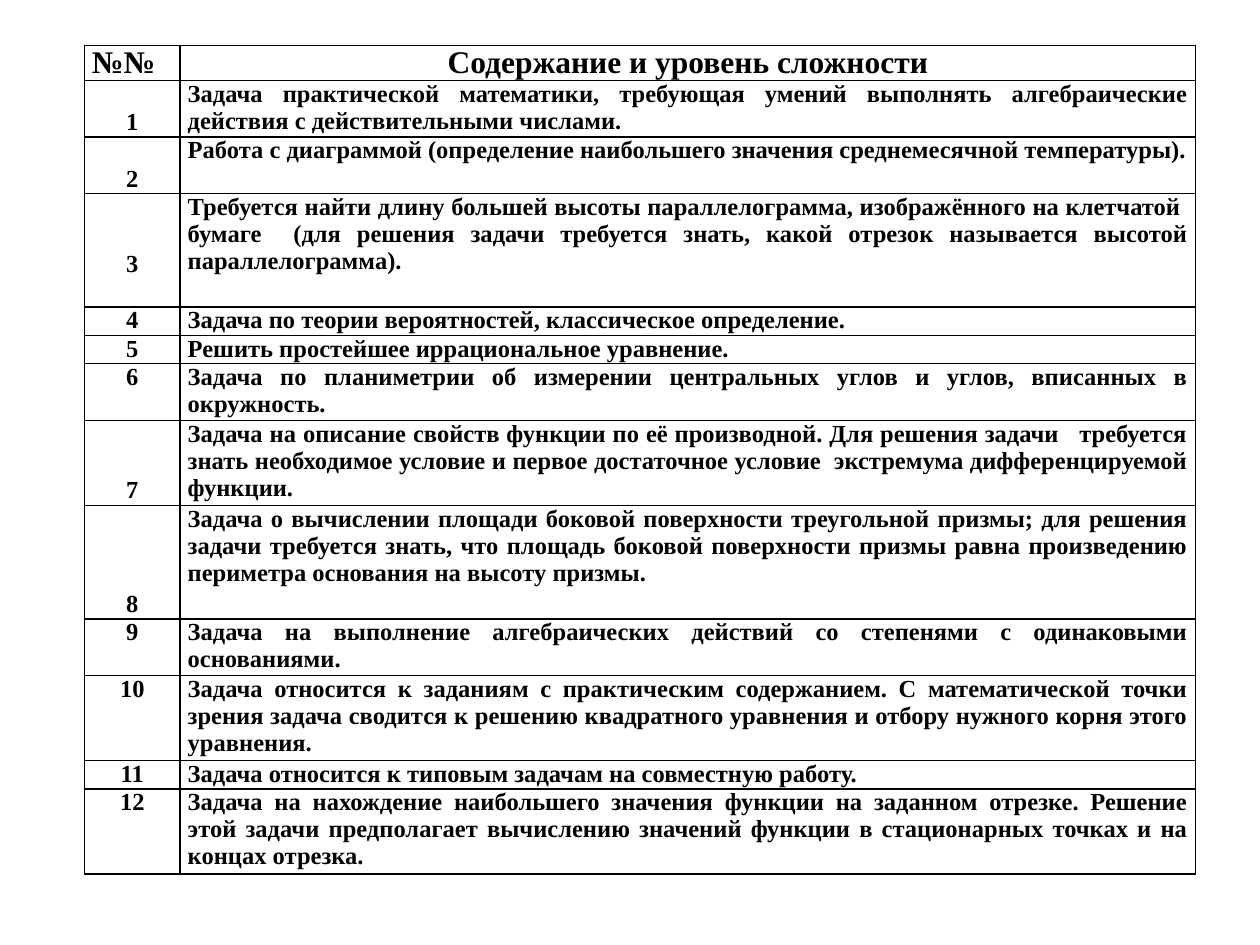
from dataclasses import dataclass

from lxml.etree import SubElement
from pptx import Presentation
from pptx.dml.color import RGBColor
from pptx.enum.text import PP_ALIGN
from pptx.oxml.ns import qn
from pptx.table import _Cell
from pptx.util import Inches, Pt

COLORS = {"ink": "000000"}
FONT = "Times New Roman"
LINE_HEIGHT = 0.9 / 4
COLUMN_WIDTHS = (0.76, 8.06)


@dataclass
class Task:
    """A task description, its row height in lines and the lines above its number."""

    text: str
    lines: int = 1
    lines_above: int = 0


TASKS = [
    Task("Задача практической математики, требующая умений выполнять алгебраические "
         "действия с действительными числами.", 2, 1),
    Task("Работа с диаграммой (определение наибольшего значения среднемесячной "
         "температуры).", 2, 1),
    Task("Требуется найти длину большей высоты параллелограмма, изображённого на "
         "клетчатой  бумаге  (для решения задачи требуется знать, какой отрезок "
         "называется высотой параллелограмма).", 4, 2),
    Task("Задача по теории вероятностей, классическое определение."),
    Task("Решить простейшее иррациональное уравнение."),
    Task("Задача по планиметрии об измерении центральных углов и углов, вписанных "
         "в окружность.", 2),
    Task("Задача на описание свойств функции по её производной. Для решения задачи   "
         "требуется знать необходимое условие и первое достаточное условие  экстремума "
         "дифференцируемой функции.", 3, 2),
    Task("Задача о вычислении площади боковой поверхности треугольной призмы; для "
         "решения задачи требуется знать, что площадь боковой поверхности призмы равна "
         "произведению периметра основания на высоту призмы.", 4, 3),
    Task("Задача на выполнение алгебраических действий со степенями с одинаковыми "
         "основаниями.", 2),
    Task("Задача относится к заданиям с практическим содержанием. С математической "
         "точки зрения задача сводится к решению квадратного уравнения и отбору "
         "нужного корня этого уравнения.", 3),
    Task("Задача относится к типовым задачам на совместную работу."),
    Task("Задача на нахождение наибольшего значения функции на заданном отрезке. "
         "Решение этой задачи предполагает вычислению значений функции в стационарных "
         "точках и на концах отрезка.", 3),
]


def add_borders(cell: _Cell) -> None:
    """Draw a thin solid line on every side of the cell."""
    properties = cell._tc.get_or_add_tcPr()
    for side in ("a:lnL", "a:lnR", "a:lnT", "a:lnB"):
        line = SubElement(properties, qn(side), w=str(Pt(1)))
        fill = SubElement(line, qn("a:solidFill"))
        SubElement(fill, qn("a:srgbClr"), val=COLORS["ink"])


def fill_cell(cell: _Cell, text: str, align: PP_ALIGN, size: int = 14,
              lines_above: int = 0) -> None:
    """Write bold text into a bordered, unfilled cell."""
    add_borders(cell)
    cell.fill.background()
    cell.margin_left = cell.margin_right = Inches(0.06)
    cell.margin_top = Inches(lines_above * LINE_HEIGHT)
    cell.margin_bottom = 0
    cell.text_frame.text = text
    para = cell.text_frame.paragraphs[0]
    para.alignment = align
    font = para.runs[0].font
    font.name = FONT
    font.size = Pt(size)
    font.bold = True
    font.color.rgb = RGBColor.from_string(COLORS["ink"])


def main() -> None:
    """Build the slide with the table of tasks."""
    deck = Presentation()
    deck.slide_width, deck.slide_height = Inches(10), Inches(7.5)
    page = deck.slides.add_slide(deck.slide_layouts[6])

    row_lines = [1] + [task.lines for task in TASKS]
    table = page.shapes.add_table(
        len(row_lines), len(COLUMN_WIDTHS), Inches(0.67), Inches(0.36),
        Inches(sum(COLUMN_WIDTHS)), Inches(sum(row_lines) * LINE_HEIGHT)).table
    table.first_row = table.horz_banding = False
    for column, width in zip(table.columns, COLUMN_WIDTHS):
        column.width = Inches(width)
    for row, lines in zip(table.rows, row_lines):
        row.height = Inches(lines * LINE_HEIGHT)

    fill_cell(table.cell(0, 0), "№№", PP_ALIGN.JUSTIFY, size=18)
    fill_cell(table.cell(0, 1), "Содержание и уровень сложности", PP_ALIGN.CENTER, size=18)
    for number, task in enumerate(TASKS, start=1):
        fill_cell(table.cell(number, 0), str(number), PP_ALIGN.CENTER,
                  lines_above=task.lines_above)
        fill_cell(table.cell(number, 1), task.text, PP_ALIGN.JUSTIFY)

    deck.save("out.pptx")


if __name__ == "__main__":
    main()
